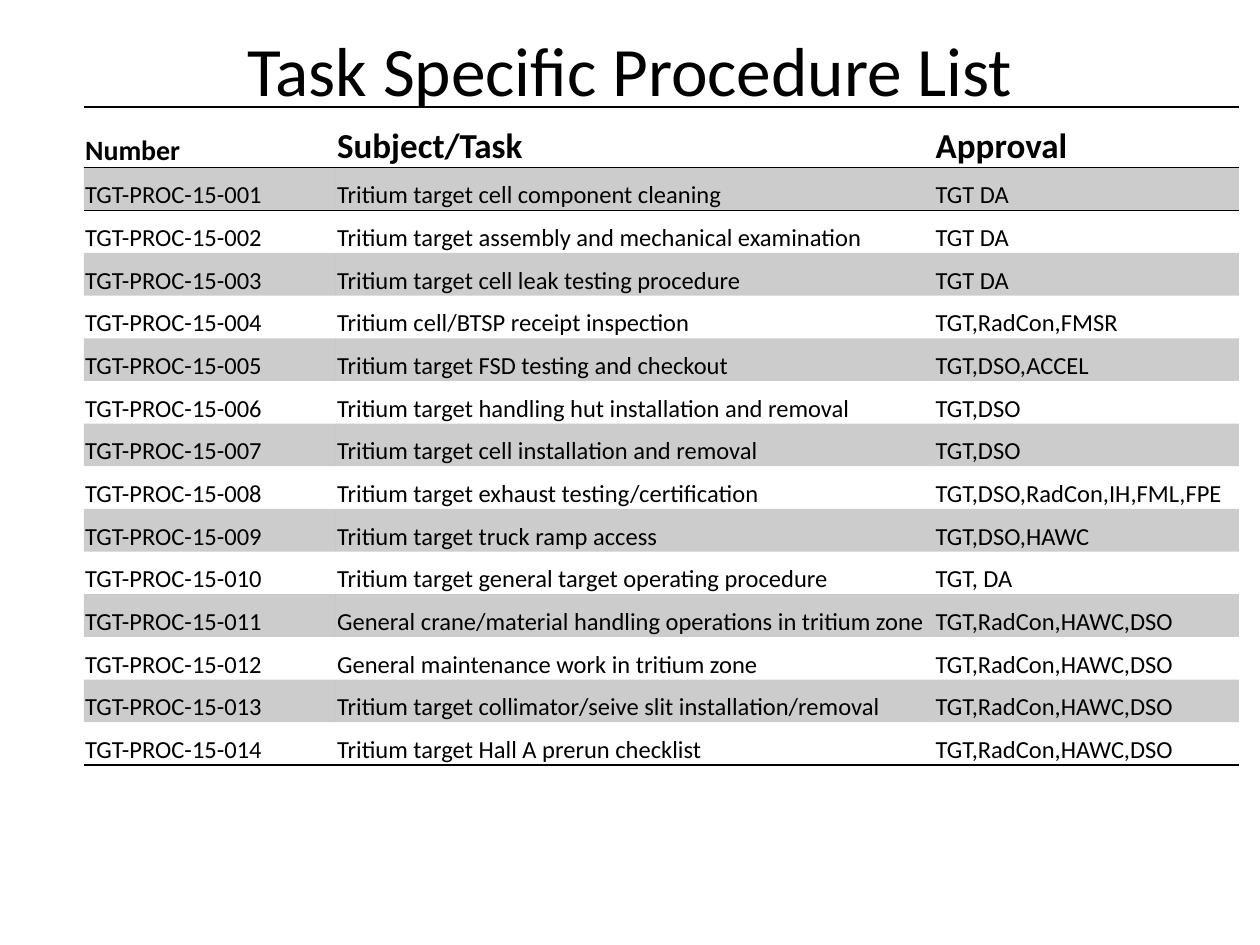
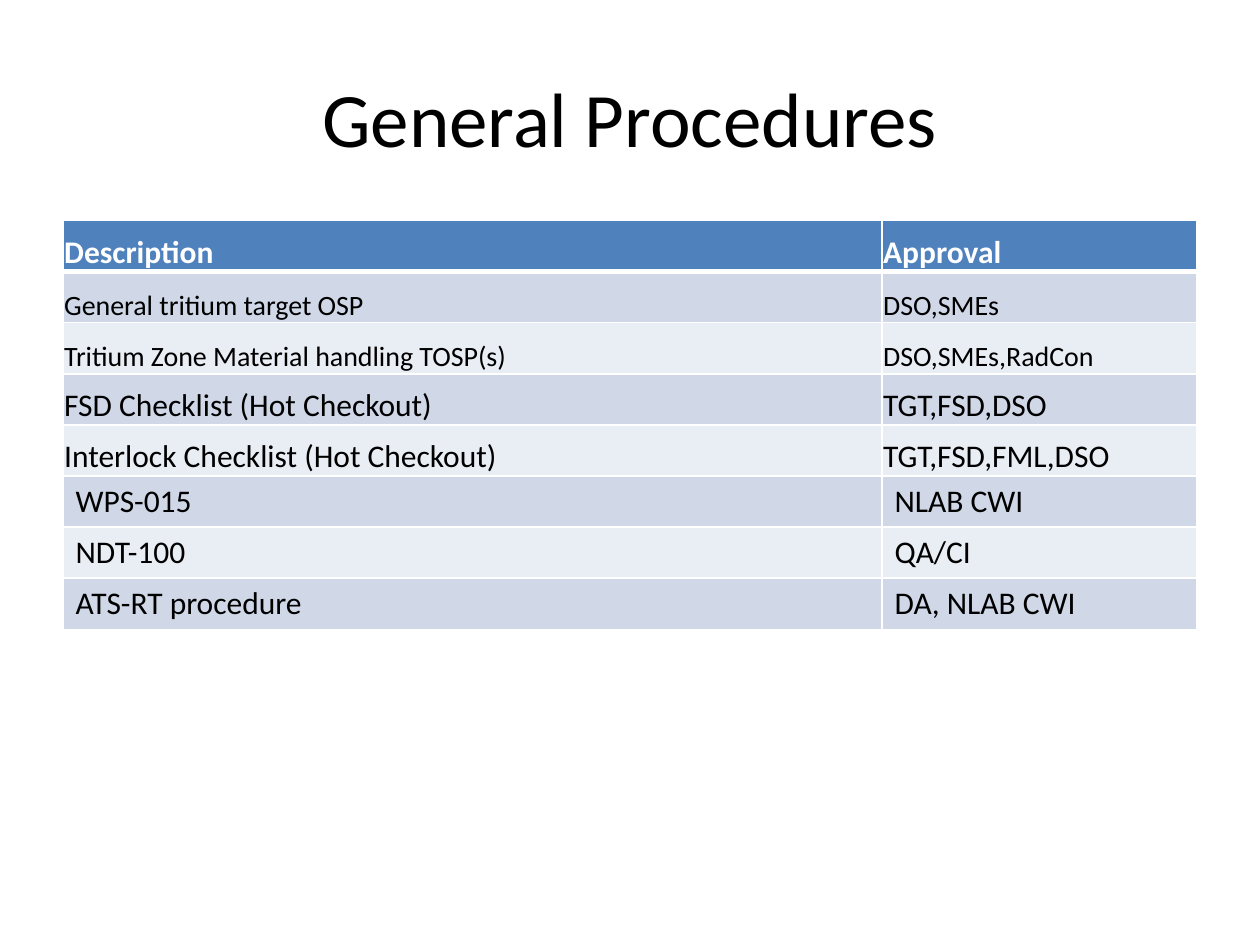
from dataclasses import dataclass, field
from typing import Optional

from lxml.etree import SubElement
from pptx import Presentation
from pptx.dml.color import RGBColor
from pptx.enum.text import MSO_ANCHOR as Anchor, PP_ALIGN as Align
from pptx.oxml.ns import qn
from pptx.util import Pt

BLACK = RGBColor(0x00, 0x00, 0x00)
WHITE = RGBColor(0xFF, 0xFF, 0xFF)
HEADER_BLUE = RGBColor(0x4F, 0x81, 0xBD)
BAND_DARK = RGBColor(0xD0, 0xD8, 0xE8)
BAND_LIGHT = RGBColor(0xE9, 0xED, 0xF4)

FONT = "Calibri"
PLAIN_STYLE = "{2D5ABB26-0587-4C30-8999-92F81FD0307C}"  # no style, no grid
TIGHT = (0.7, 0.7, 0.7, 0)  # left, top, right, bottom
ROOMY = (7.2, 3.6, 7.2, 3.6)

TASKS = [
    ("Tritium target cell component cleaning", "TGT DA"),
    ("Tritium target assembly and mechanical examination", "TGT DA"),
    ("Tritium target cell leak testing procedure", "TGT DA"),
    ("Tritium cell/BTSP receipt inspection", "TGT,RadCon,FMSR"),
    ("Tritium target FSD testing and checkout", "TGT,DSO,ACCEL"),
    ("Tritium target handling hut installation and removal", "TGT,DSO"),
    ("Tritium target cell installation and removal", "TGT,DSO"),
    ("Tritium target exhaust testing/certification", "TGT,DSO,RadCon,IH,FML,FPE"),
    ("Tritium target truck ramp access", "TGT,DSO,HAWC"),
    ("Tritium target general target operating procedure", "TGT, DA"),
    ("General crane/material handling operations in tritium zone", "TGT,RadCon,HAWC,DSO"),
    ("General maintenance work in tritium zone", "TGT,RadCon,HAWC,DSO"),
    ("Tritium target collimator/seive slit installation/removal", "TGT,RadCon,HAWC,DSO"),
    ("Tritium target Hall A prerun checklist", "TGT,RadCon,HAWC,DSO"),
]

# description, approval, text size, margins, anchor
GENERAL = [
    ("General tritium target OSP", "DSO,SMEs", 16, TIGHT, Anchor.BOTTOM),
    ("Tritium Zone Material handling TOSP(s)", "DSO,SMEs,RadCon", 16, TIGHT, Anchor.BOTTOM),
    ("FSD Checklist (Hot Checkout)", "TGT,FSD,DSO", 18, TIGHT, Anchor.BOTTOM),
    ("Interlock Checklist (Hot Checkout)", "TGT,FSD,FML,DSO", 18, TIGHT, Anchor.BOTTOM),
    ("WPS-015", "NLAB CWI", 18, ROOMY, Anchor.TOP),
    ("NDT-100", "QA/CI", 18, ROOMY, Anchor.TOP),
    ("ATS-RT procedure", "DA, NLAB CWI", 18, ROOMY, Anchor.TOP),
]


@dataclass
class Row:
    texts: tuple[str, ...]
    height: float
    sizes: tuple[float, ...]
    bold: bool = False
    color: RGBColor = BLACK
    fill: Optional[RGBColor] = None
    opacity: int = 100
    margins: tuple[float, ...] = TIGHT
    anchor: Anchor = Anchor.BOTTOM
    border_color: RGBColor = BLACK
    borders: dict[str, float] = field(default_factory=dict)  # side (L, R, T, B) to width


def write(frame, text: str, *, size: float, color: RGBColor = BLACK,
          bold: bool = False, align: Align = Align.LEFT) -> None:
    paragraph = frame.paragraphs[0]
    paragraph.alignment = align
    run = paragraph.add_run()
    run.text = text
    run.font.name = FONT
    run.font.size = Pt(size)
    run.font.bold = bold
    run.font.color.rgb = color


def add_title(slide, text: str, *, left: float, top: float, width: float,
              height: float, size: float) -> None:
    box = slide.shapes.add_textbox(Pt(left), Pt(top), Pt(width), Pt(height))
    box.text_frame.word_wrap = True
    box.text_frame.vertical_anchor = Anchor.MIDDLE
    write(box.text_frame, text, size=size, align=Align.CENTER)


def style_cell(cell, row: Row) -> None:
    """Set borders first, since the schema puts them before the fill."""
    properties = cell._tc.get_or_add_tcPr()
    for side in "LRTB":
        if side in row.borders:
            line = SubElement(properties, qn(f"a:ln{side}"), w=str(Pt(row.borders[side])))
            paint = SubElement(line, qn("a:solidFill"))
            SubElement(paint, qn("a:srgbClr"), val=str(row.border_color))
    if row.fill is None:
        cell.fill.background()
    else:
        cell.fill.solid()
        cell.fill.fore_color.rgb = row.fill
        if row.opacity < 100:
            color = properties.find(qn("a:solidFill")).find(qn("a:srgbClr"))
            SubElement(color, qn("a:alpha"), val=str(row.opacity * 1000))
    cell.margin_left, cell.margin_top, cell.margin_right, cell.margin_bottom = map(Pt, row.margins)
    cell.vertical_anchor = row.anchor


def add_grid(slide, rows: list[Row], *, left: float, top: float,
             widths: tuple[float, ...]) -> None:
    frame = slide.shapes.add_table(len(rows), len(widths), Pt(left), Pt(top),
                                   Pt(sum(widths)), Pt(sum(row.height for row in rows)))
    table = frame.table
    table.first_row = table.horz_banding = False
    table._tbl.tblPr.find(qn("a:tableStyleId")).text = PLAIN_STYLE
    for column, width in zip(table.columns, widths):
        column.width = Pt(width)
    for index, row in enumerate(rows):
        table.rows[index].height = Pt(row.height)
        for cell, text, size in zip(table.rows[index].cells, row.texts, row.sizes):
            style_cell(cell, row)
            write(cell.text_frame, text, size=size, color=row.color, bold=row.bold)


def build_task_slide(slide) -> None:
    add_title(slide, "Task Specific Procedure List",
              left=50, top=18, width=620, height=43.2, size=39.6)
    rows = [Row(("Number", "Subject/Task", "Approval"), 34.6, (16, 20, 20),
                bold=True, borders={"T": 1, "B": 1})]
    for number, (task, approval) in enumerate(TASKS, start=1):
        rows.append(Row((f"TGT-PROC-15-{number:03}", task, approval), 24.4, (14, 14, 14),
                        fill=BLACK if number % 2 else None, opacity=20))
    rows[1].borders = {"T": 1}
    rows[-1].borders = {"B": 1}
    add_grid(slide, rows, left=48, top=61.2, widths=(144, 342, 174))


def build_general_slide(slide) -> None:
    add_title(slide, "General Procedures", left=36, top=21.6, width=648, height=90, size=44)
    grid = dict.fromkeys("LRTB", 1)
    height = 29.2
    rows = [Row(("Description", "Approval"), height, (18, 18), bold=True, color=WHITE,
                fill=HEADER_BLUE, border_color=WHITE, borders=grid | {"B": 3})]
    for index, (description, approval, size, margins, anchor) in enumerate(GENERAL):
        rows.append(Row((description, approval), height, (size, size),
                        fill=BAND_LIGHT if index % 2 else BAND_DARK,
                        margins=margins, anchor=anchor, border_color=WHITE,
                        borders=grid if index else grid | {"T": 3}))
    add_grid(slide, rows, left=36, top=126, widths=(468, 180))


def main() -> None:
    deck = Presentation()
    deck.slide_width, deck.slide_height = Pt(720), Pt(540)
    blank = deck.slide_layouts[6]
    for build in (build_task_slide, build_general_slide):
        build(deck.slides.add_slide(blank))
    deck.save("out.pptx")


if __name__ == "__main__":
    main()
